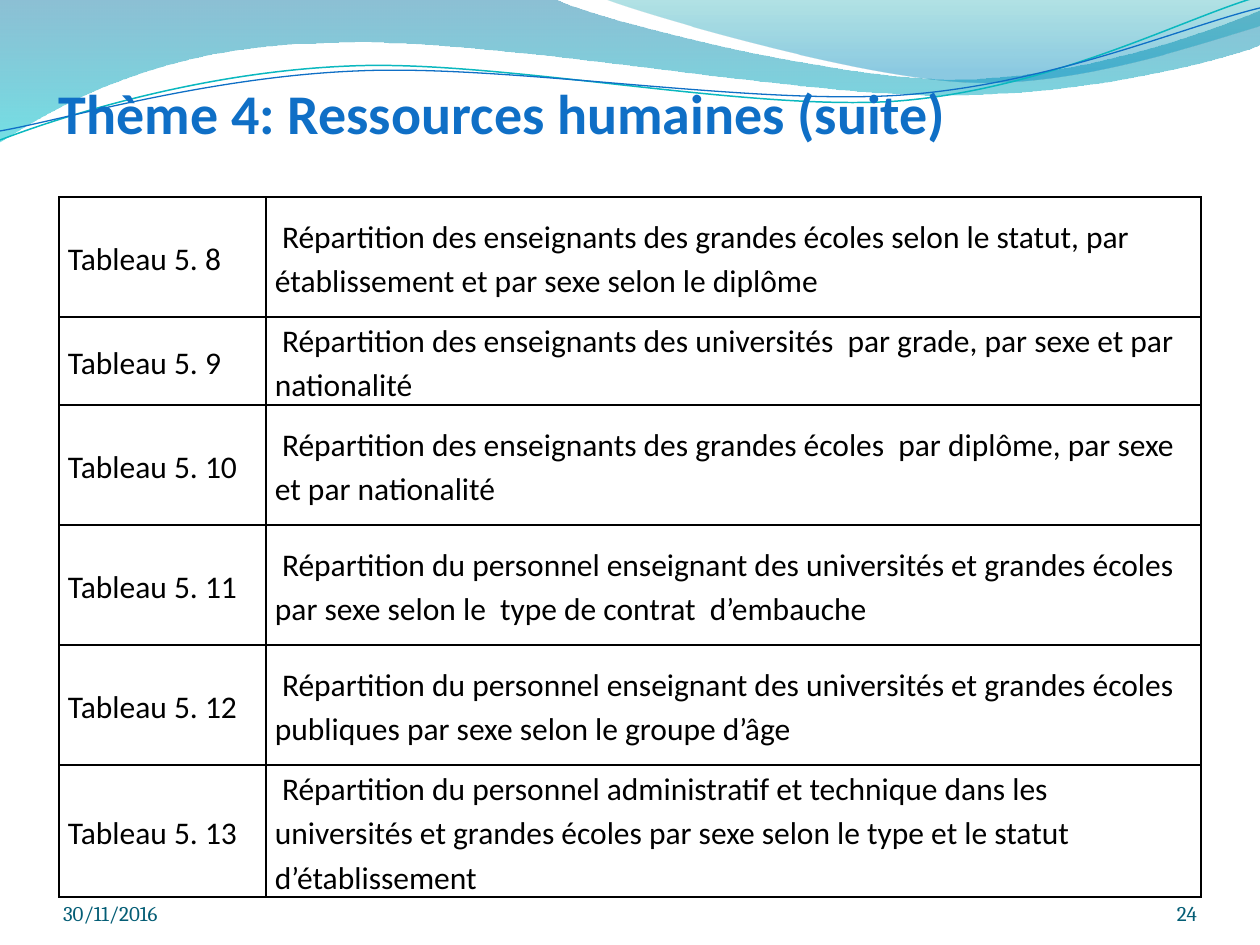
from lxml.etree import SubElement
from pptx import Presentation
from pptx.dml.color import RGBColor
from pptx.enum.text import MSO_ANCHOR, PP_ALIGN
from pptx.oxml.ns import qn
from pptx.util import Pt

PX = 914400 / 126

# Wave outlines: a start point, then lines (one point) or Bézier curves (three)
BROAD_WAVE = [
    (0, 0), [(554, -1)],
    [(600, 21), (837, 79), (955, 79)], [(1074, 79), (1207, 33), (1260, 11)],
    [(1261, 45)], [(1238, 55), (1096, 96), (940, 95)],
    [(784, 95), (481, 35), (324, 43)], [(163, 45), (58, 105), (-1, 142)],
]
RIGHT_WAVE = [
    (604, -1), [(641, 14), (859, 78), (969, 82)],
    [(1079, 87), (1211, 40), (1260, 26)], [(1260, 0)],
]
TEAL_LINE = [
    (0, 140), [(60, 117), (199, 72), (349, 66)],
    [(498, 59), (747, 112), (898, 101)], [(1050, 89), (1182, 19), (1257, -3)],
]
BLUE_LINE = [
    (0, 131), [(59, 121), (207, 77), (357, 71)],
    [(508, 64), (752, 106), (903, 95)], [(1053, 84), (1185, 26), (1260, 8)],
]

FIRST_TABLE_NUMBER = 8
DESCRIPTIONS = [
    " Répartition des enseignants des grandes écoles selon le statut, par établissement et par sexe selon le diplôme",
    " Répartition des enseignants des universités  par grade, par sexe et par nationalité",
    " Répartition des enseignants des grandes écoles  par diplôme, par sexe et par nationalité",
    " Répartition du personnel enseignant des universités et grandes écoles par sexe selon le  type de contrat  d’embauche",
    " Répartition du personnel enseignant des universités et grandes écoles publiques par sexe selon le groupe d’âge",
    " Répartition du personnel administratif et technique dans les universités et grandes écoles par sexe selon le type et le statut d’établissement",
]
COLUMN_WIDTHS = [207, 935]
ROW_HEIGHTS = [120, 88, 120, 120, 120, 132]


def px(length):
    return round(length * PX)


def color(value):
    return RGBColor.from_string(value)


def set_font(paragraph, name, size, value, bold=False):
    font = paragraph.font
    font.name, font.size, font.bold = name, Pt(size), bold
    font.color.rgb = color(value)


def add_outline(slide, outline, close):
    (left, top), *segments = outline
    builder = slide.shapes.build_freeform(px(left), px(top), scale=1.0)
    points = [(px(x), px(y)) for segment in segments for x, y in segment]
    builder.add_line_segments(points, close=close)
    shape = builder.convert_to_shape()
    shape.shadow.inherit = False
    # Join each three points of a curve into one Bézier segment
    lines = iter(list(shape.element.iter(qn("a:lnTo"))))
    for segment in segments:
        first, *others = [next(lines) for _ in segment]
        if others:
            curve = first.makeelement(qn("a:cubicBezTo"), {})
            first.addprevious(curve)
            for line in (first, *others):
                curve.append(line[0])
                line.getparent().remove(line)
    return shape


def add_wave(slide, outline, stops):
    shape = add_outline(slide, outline, close=True)
    shape.line.fill.background()
    shape.fill.gradient()
    shape.fill.gradient_angle = 270
    for stop, (position, value, _) in zip(shape.fill.gradient_stops, stops):
        stop.position = position
        stop.color.rgb = color(value)
    # Opacity of each gradient stop
    for element, (_, _, opacity) in zip(shape.element.spPr.iter(qn("a:srgbClr")), stops):
        SubElement(element, qn("a:alpha"), val=str(opacity * 1000))


def add_wave_line(slide, outline, value, width):
    shape = add_outline(slide, outline, close=False)
    shape.fill.background()
    shape.line.color.rgb = color(value)
    shape.line.width = Pt(width)


def add_text(slide, box, text, name, size, value, bold=False, align=PP_ALIGN.LEFT, top_inset=0):
    frame = slide.shapes.add_textbox(*map(px, box)).text_frame
    frame.word_wrap = True
    frame.vertical_anchor = MSO_ANCHOR.BOTTOM
    frame.margin_left = frame.margin_right = frame.margin_bottom = 0
    frame.margin_top = px(top_inset)
    paragraph = frame.paragraphs[0]
    paragraph.text = text
    paragraph.alignment = align
    set_font(paragraph, name, size, value, bold)


def set_borders(cell, value, width):
    properties = cell._tc.get_or_add_tcPr()
    for index, side in enumerate(("lnL", "lnR", "lnT", "lnB")):
        line = properties.makeelement(qn(f"a:{side}"), {"w": str(Pt(width))})
        properties.insert(index, line)
        SubElement(SubElement(line, qn("a:solidFill")), qn("a:srgbClr"), val=value)


def fill_cell(cell, text):
    cell.fill.background()
    cell.vertical_anchor = MSO_ANCHOR.MIDDLE
    cell.margin_left = cell.margin_right = px(9)
    cell.margin_top = cell.margin_bottom = 0
    paragraph = cell.text_frame.paragraphs[0]
    paragraph.text = text
    paragraph.line_spacing = 1.15
    set_font(paragraph, "Calibri", 18, "000000")
    set_borders(cell, "000000", 1)


def add_list_table(slide, left, top):
    table = slide.shapes.add_table(
        len(DESCRIPTIONS), len(COLUMN_WIDTHS), px(left), px(top),
        px(sum(COLUMN_WIDTHS)), px(sum(ROW_HEIGHTS))).table
    table.first_row = table.horz_banding = False
    for column, width in zip(table.columns, COLUMN_WIDTHS):
        column.width = px(width)
    for index, (row, height) in enumerate(zip(table.rows, ROW_HEIGHTS)):
        row.height = px(height)
        fill_cell(row.cells[0], f"Tableau 5. {FIRST_TABLE_NUMBER + index}")
        fill_cell(row.cells[1], DESCRIPTIONS[index])


def main():
    presentation = Presentation()
    presentation.slide_width, presentation.slide_height = px(1260), px(945)
    slide = presentation.slides.add_slide(presentation.slide_layouts[6])

    # Waves along the top
    add_wave(slide, BROAD_WAVE, [(0, "0074A1", 45), (1, "00C6CF", 55)])
    add_wave(slide, RIGHT_WAVE, [(0, "00A1A9", 30), (0.8, "008BBF", 45)])
    add_wave_line(slide, TEAL_LINE, "0AB8BF", 0.85)
    add_wave_line(slide, BLUE_LINE, "0F6FC6", 0.75)

    # Title and list of tables
    add_text(slide, (59, 69, 1134, 77), "Thème 4: Ressources humaines (suite)",
             "Calibri", 32, "0F6FC6", bold=True, top_inset=6)
    add_list_table(slide, 59, 197)

    # Footer
    add_text(slide, (1092, 876, 105, 50), "24", "Cambria", 12, "045D75", align=PP_ALIGN.RIGHT)
    add_text(slide, (63, 876, 294, 50), "30/11/2016", "Cambria", 12, "045D75")

    presentation.save("out.pptx")


if __name__ == "__main__":
    main()
